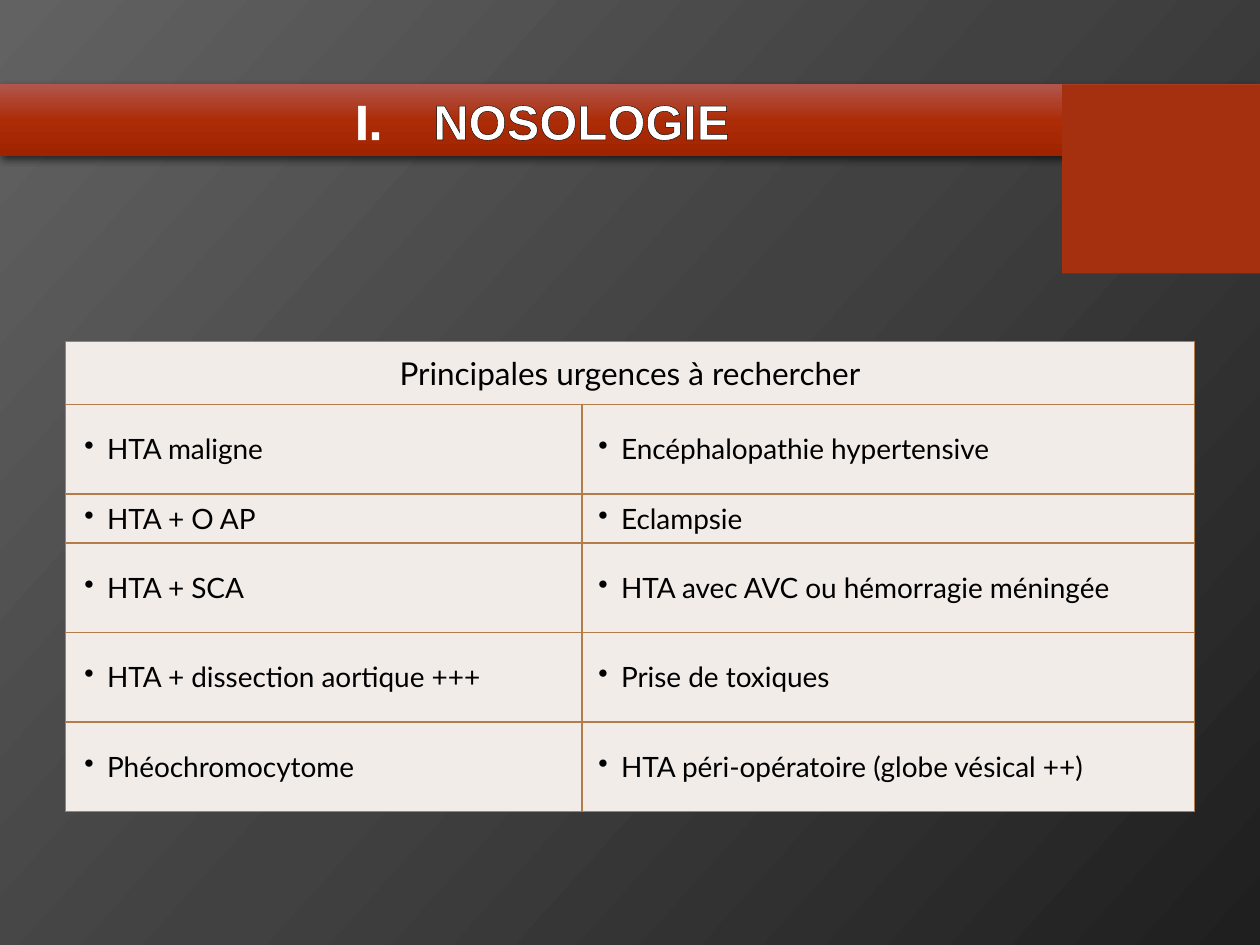
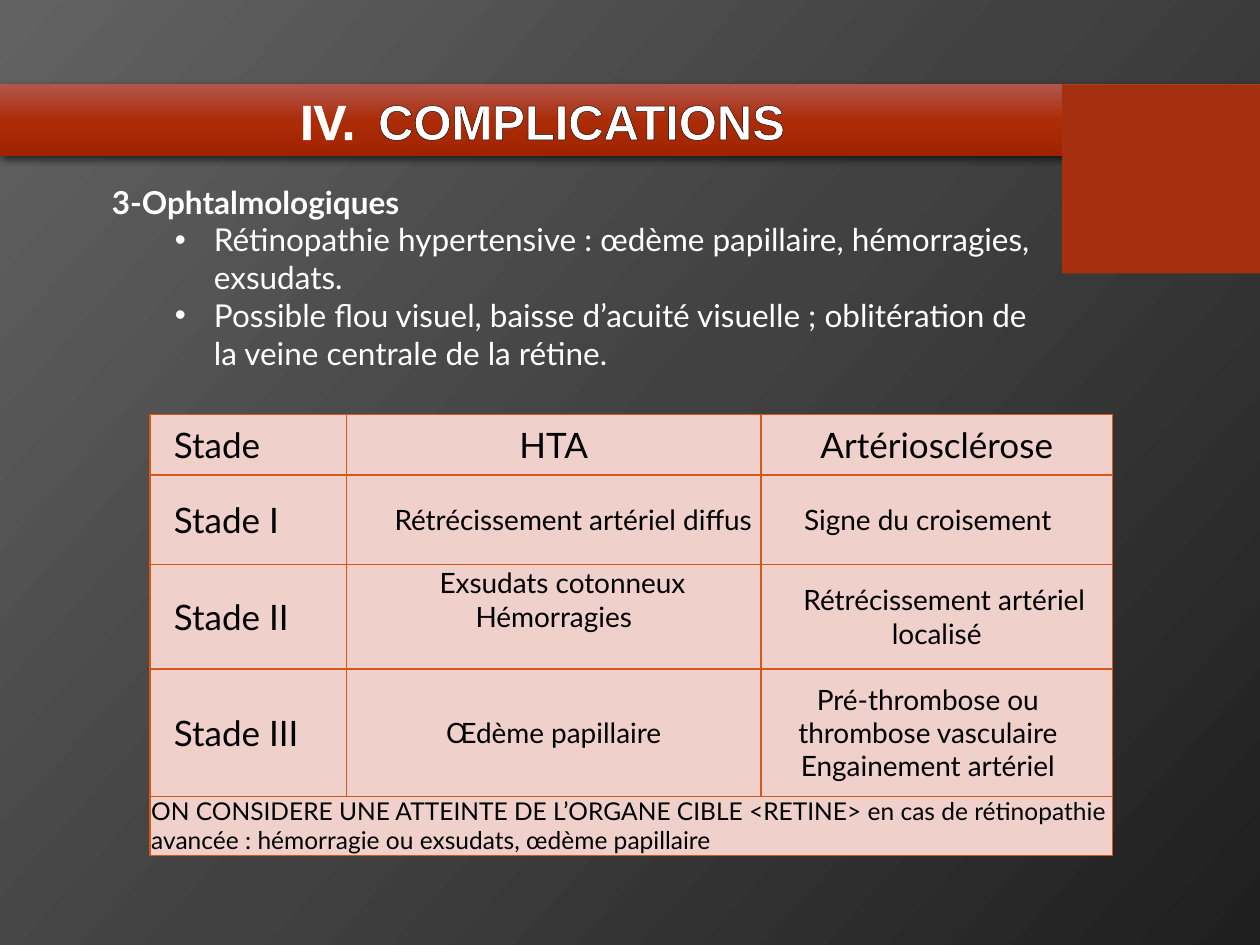
import dataclasses

import lxml.etree
import pptx
import pptx.dml.color
import pptx.enum.shapes
import pptx.enum.text
import pptx.oxml.ns
import pptx.util

Inches = pptx.util.Inches
Pt = pptx.util.Pt
qn = pptx.oxml.ns.qn
CENTER = pptx.enum.text.PP_ALIGN.CENTER
MIDDLE = pptx.enum.text.MSO_ANCHOR.MIDDLE
BOTTOM = pptx.enum.text.MSO_ANCHOR.BOTTOM


@dataclasses.dataclass(frozen=True)
class Theme:
    """Colours, fonts and type sizes shared by the slides."""

    background: tuple = ("626262", "414141", "1F1F1F")
    band: tuple = ("B1564C", "AC2C08", "A02300")
    block: str = "A5300F"
    light: str = "FFFFFF"
    dark: str = "000000"
    emergency_fill: str = "F2ECE9"
    emergency_border: str = "B27D49"
    stage_fill: str = "EFD0CB"
    stage_border: str = "D55816"
    title_font: str = "Arial"
    body_font: str = "Lato"
    title_size: int = 28
    stage_size: int = 20
    lead_size: int = 18
    cell_size: int = 16
    note_size: int = 14


@dataclasses.dataclass(frozen=True)
class Box:
    """A rectangle in inches."""

    left: float
    top: float
    width: float
    height: float

    def lengths(self):
        """Return the four values as lengths."""
        return [Inches(value) for value in dataclasses.astuple(self)]


THEME = Theme()
BAND = Box(0, 0.67, 10, 0.57)


def rgb(color):
    """Turn a hex string into a colour."""
    return pptx.dml.color.RGBColor.from_string(color)


def add_element(parent, tag, **attributes):
    """Append an XML element with the given attributes."""
    values = {name: str(value) for name, value in attributes.items()}
    return lxml.etree.SubElement(parent, qn(tag), values)


def add_solid_fill(parent, color):
    """Append a solid fill to a line element."""
    add_element(add_element(parent, "a:solidFill"), "a:srgbClr", val=color)


def add_outer_shadow(effects, blur, distance, opacity):
    """Append a shadow that falls straight down."""
    shadow = add_element(effects, "a:outerShdw", blurRad=Pt(blur), dist=Pt(distance),
                         dir=90 * 60000, algn="ctr", rotWithShape=0)
    color = add_element(shadow, "a:srgbClr", val=THEME.dark)
    add_element(color, "a:alpha", val=opacity * 1000)


def set_gradient(fill, element, colors, angle):
    """Give a fill evenly spaced colours at a clockwise angle."""
    fill.gradient()
    fill.gradient_angle = 360 - angle
    stops = element.find(".//" + qn("a:gsLst"))
    stops.clear()
    for index, color in enumerate(colors):
        stop = add_element(stops, "a:gs", pos=index * 100000 // (len(colors) - 1))
        add_element(stop, "a:srgbClr", val=color)


def write_text(paragraph, text, size=THEME.cell_size, font=THEME.body_font, color=THEME.dark,
               bold=False, align=None, left=0, hanging=0, right=0, bullet=None,
               number=None, bullet_font=None):
    """Write one formatted run, with indents and an optional bullet or Roman number."""
    properties = paragraph._p.get_or_add_pPr()
    properties.set("marL", str(Inches(left)))
    properties.set("marR", str(Inches(right)))
    properties.set("indent", str(-Inches(hanging)))
    if bullet_font:
        add_element(properties, "a:buFont", typeface=bullet_font)
    if number:
        add_element(properties, "a:buAutoNum", type="romanUcPeriod", startAt=number)
    elif bullet:
        add_element(properties, "a:buChar", char=bullet)
    else:
        add_element(properties, "a:buNone")
    if align is not None:
        paragraph.alignment = align
    run = paragraph.add_run()
    run.text = text
    run.font.size = Pt(size)
    run.font.name = font
    run.font.bold = bold
    run.font.color.rgb = rgb(color)
    return run


def write_paragraphs(text_frame, entries):
    """Write (text, format) pairs as the paragraphs of a text frame."""
    for index, (text, options) in enumerate(entries):
        paragraph = text_frame.add_paragraph() if index else text_frame.paragraphs[0]
        write_text(paragraph, text, **options)


def add_rectangle(slide, box):
    """Add a rectangle without line or shadow."""
    shape = slide.shapes.add_shape(pptx.enum.shapes.MSO_SHAPE.RECTANGLE, *box.lengths())
    shape.shadow.inherit = False
    shape.line.fill.background()
    return shape


def add_title(slide, box, title, number, number_font):
    """Add the band, the corner block and the numbered title."""
    band = add_rectangle(slide, box)
    set_gradient(band.fill, band._element, THEME.band, 90)
    add_outer_shadow(band._element.spPr.find(qn("a:effectLst")), 4.5, 1.5, 63)

    block_width = 1.57
    block = add_rectangle(slide, Box(box.left + box.width - block_width, box.top, block_width, 1.5))
    block.fill.solid()
    block.fill.fore_color.rgb = rgb(THEME.block)

    title_box = Box(box.left, box.top, box.width - 1.39, box.height)
    text_frame = slide.shapes.add_textbox(*title_box.lengths()).text_frame
    text_frame.word_wrap = True
    text_frame.vertical_anchor = MIDDLE
    run = write_text(text_frame.paragraphs[0], title, size=THEME.title_size,
                     font=THEME.title_font, color=THEME.light, bold=True, align=CENTER,
                     left=0.62, hanging=0.62, number=number, bullet_font=number_font)
    properties = run.font._element
    outline = add_element(properties, "a:ln", w=Pt(0.75))
    add_solid_fill(outline, THEME.dark)
    properties.insert(0, outline)
    effects = add_element(properties, "a:effectLst")
    add_outer_shadow(effects, 4, 2, 65)
    properties.find(qn("a:solidFill")).addnext(effects)


def format_cell(cell, fill, border, border_width):
    """Set the borders, fill, margins and anchor of a cell."""
    properties = cell._tc.get_or_add_tcPr()
    for side in ("a:lnL", "a:lnR", "a:lnT", "a:lnB"):
        add_solid_fill(add_element(properties, side, w=Pt(border_width)), border)
    cell.fill.solid()
    cell.fill.fore_color.rgb = rgb(fill)
    cell.margin_left = cell.margin_right = Inches(0.01)
    cell.margin_top = cell.margin_bottom = 0
    cell.vertical_anchor = MIDDLE


def add_grid(slide, box, widths, heights, fill, border, border_width):
    """Add a plain bordered table and return it."""
    table = slide.shapes.add_table(len(heights), len(widths), *box.lengths()).table
    table.first_row = table.horz_banding = False
    for column, width in zip(table.columns, widths):
        column.width = Inches(width)
    for row, height in zip(table.rows, heights):
        row.height = Inches(height)
    for cell in table.iter_cells():
        format_cell(cell, fill, border, border_width)
    return table


def add_emergency_table(slide, box):
    """Add the two-column list of emergencies under one heading."""
    emergencies = [
        ("HTA maligne", "Encéphalopathie hypertensive"),
        ("HTA + O AP", "Eclampsie"),
        ("HTA + SCA", "HTA avec AVC ou hémorragie méningée"),
        ("HTA + dissection aortique +++", "Prise de toxiques"),
        ("Phéochromocytome", "HTA péri-opératoire (globe vésical ++)"),
    ]
    table = add_grid(slide, box, [4.1, box.width - 4.1], [0.5, 0.71, 0.39, 0.71, 0.71, 0.71],
                     THEME.emergency_fill, THEME.emergency_border, 1)
    heading = table.cell(0, 0)
    heading.merge(table.cell(0, 1))
    write_paragraphs(heading.text_frame, [
        ("Principales urgences à rechercher", dict(size=THEME.lead_size, align=CENTER))])
    for row, pair in enumerate(emergencies, start=1):
        for column, (text, left) in enumerate(zip(pair, (0.32, 0.3))):
            write_paragraphs(table.cell(row, column).text_frame, [
                (text, dict(left=left, hanging=0.18, bullet="•"))])


def add_stage_table(slide, box):
    """Add the retinopathy stages with a closing note."""
    centered = dict(align=CENTER)
    shifted = dict(align=CENTER, right=0.14)
    heading = dict(align=CENTER, size=THEME.stage_size)
    stages = [
        ("Stade", [("HTA", heading)], [("Artériosclérose", heading)]),
        ("Stade I",
         [("Rétrécissement artériel diffus", dict(align=CENTER, left=0.31))],
         [("Signe du croisement", shifted)]),
        ("Stade II",
         [("Exsudats cotonneux", dict(align=CENTER, left=0.14)), ("Hémorragies", centered)],
         [("Rétrécissement artériel", dict(align=CENTER, left=0.12)), ("localisé", centered)]),
        ("Stade III",
         [("Œdème papillaire", centered)],
         [("Pré-thrombose ou", shifted),
          ("thrombose vasculaire Engainement artériel", shifted)]),
    ]
    note = ("ON CONSIDERE UNE ATTEINTE DE L’ORGANE CIBLE <RETINE> en cas de rétinopathie "
            "avancée : hémorragie ou exsudats, œdème papillaire")
    table = add_grid(slide, box, [1.56, 3.29, box.width - 4.85], [0.48, 0.71, 0.83, 1.01, 0.46],
                     THEME.stage_fill, THEME.stage_border, 0.75)
    for row, (stage, *findings) in enumerate(stages):
        label = [(stage, dict(size=THEME.stage_size, left=0.18))]
        for column, entries in enumerate([label, *findings]):
            write_paragraphs(table.cell(row, column).text_frame, entries)
    table.cell(2, 1).margin_bottom = Inches(0.27)
    note_cell = table.cell(len(stages), 0)
    note_cell.merge(table.cell(len(stages), 2))
    note_cell.vertical_anchor = BOTTOM
    write_paragraphs(note_cell.text_frame, [(note, dict(size=THEME.note_size))])


def add_eye_findings(slide, box):
    """Add the heading and bullets on eye complications."""
    text_frame = slide.shapes.add_textbox(*box.lengths()).text_frame
    text_frame.word_wrap = True
    lead = dict(size=THEME.lead_size, color=THEME.light)
    bulleted = dict(lead, left=0.81, hanging=0.31, bullet="•", bullet_font=THEME.title_font)
    write_paragraphs(text_frame, [
        ("3-Ophtalmologiques", dict(lead, bold=True, left=0.38, hanging=0.38)),
        ("Rétinopathie hypertensive : œdème papillaire, hémorragies, exsudats.", bulleted),
        ("Possible flou visuel, baisse d’acuité visuelle ; oblitération de la veine centrale "
         "de la rétine.", bulleted),
    ])


def build_nosology(slide):
    """Build the slide on emergencies to look for."""
    add_title(slide, BAND, "NOSOLOGIE", 1, THEME.title_font)
    add_emergency_table(slide, Box(0.52, 2.71, 8.96, 3.73))


def build_complications(slide):
    """Build the slide on eye complications."""
    add_title(slide, BAND, "COMPLICATIONS", 4, THEME.body_font)
    add_eye_findings(slide, Box(0.79, 1.4, 7.56, 1.92))
    add_stage_table(slide, Box(1.19, 3.29, 7.64, 3.49))


def main():
    """Build and save the presentation."""
    presentation = pptx.Presentation()
    presentation.slide_width = Inches(10)
    presentation.slide_height = Inches(7.5)
    layout = presentation.slide_layouts[6]
    set_gradient(layout.background.fill, layout.element, THEME.background, 42)
    for build in (build_nosology, build_complications):
        build(presentation.slides.add_slide(layout))
    presentation.save("out.pptx")


if __name__ == "__main__":
    main()
